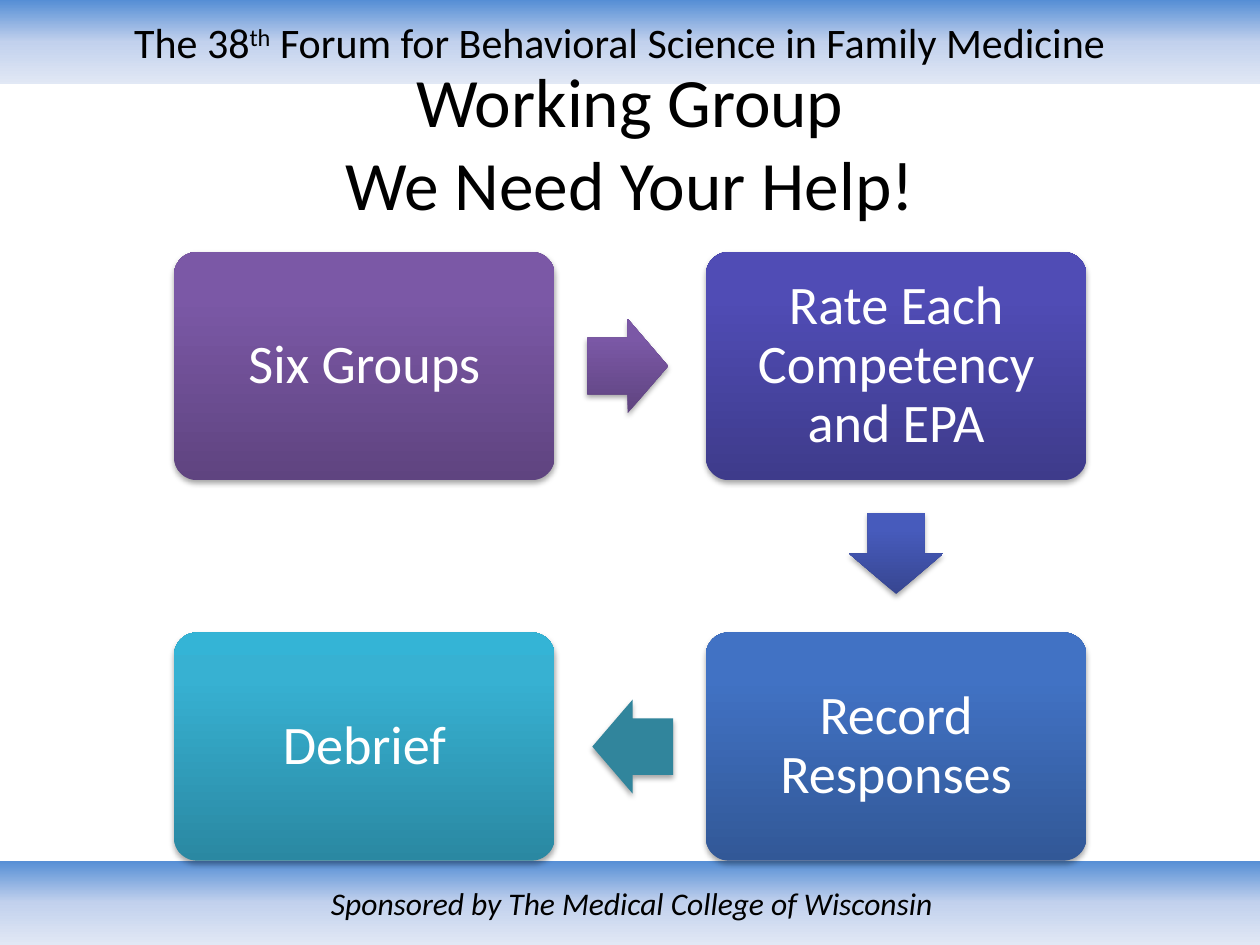
"""Build the working group slide: four steps joined by arrows between two bands."""
from copy import deepcopy
from lxml.etree import SubElement
from pptx import Presentation
from pptx.dml.color import RGBColor
from pptx.enum.shapes import MSO_SHAPE as Kind
from pptx.enum.text import MSO_ANCHOR as Anchor, MSO_AUTO_SIZE as Fit, PP_ALIGN as Align
from pptx.oxml.ns import qn
from pptx.util import Cm, Pt

BLACK = RGBColor(0x00, 0x00, 0x00)
WHITE = RGBColor(0xFF, 0xFF, 0xFF)
TEAL = RGBColor(0x31, 0x85, 0x9C)
SKY = [RGBColor(0x55, 0x8E, 0xD5), RGBColor(0xC2, 0xD1, 0xED), RGBColor(0xE1, 0xE8, 0xF5)]
PLUM = [RGBColor(0x5F, 0x44, 0x80), RGBColor(0x7B, 0x58, 0xA6), RGBColor(0x7C, 0x57, 0xA8)]
VIOLET = [RGBColor(0x3E, 0x3B, 0x8B), RGBColor(0x50, 0x4C, 0xB5), RGBColor(0x4F, 0x4B, 0xB8)]
INDIGO = [RGBColor(0x37, 0x46, 0x91), RGBColor(0x47, 0x5B, 0xBC), RGBColor(0x45, 0x5A, 0xBF)]
BLUE = [RGBColor(0x32, 0x58, 0x97), RGBColor(0x41, 0x72, 0xC4), RGBColor(0x3F, 0x72, 0xC7)]
AQUA = [RGBColor(0x2A, 0x88, 0xA2), RGBColor(0x37, 0xB1, 0xD2), RGBColor(0x34, 0xB4, 0xD6)]

deck = Presentation()
deck.slide_width, deck.slide_height = Cm(25.4), Cm(19.05)
slide = deck.slides.add_slide(deck.slide_layouts[5])
shapes = slide.shapes


def draw(kind, box, ramp, angle=90, middle=0.8, shade=True):
    """Add a shape filled with a three-colour ramp, or one colour, and a soft shadow."""
    shape = shapes.add_shape(kind, *[Cm(n) for n in box])
    if isinstance(ramp, RGBColor):
        shape.fill.solid()
        shape.fill.fore_color.rgb = ramp
    else:
        shape.fill.gradient()
        shape.fill.gradient_angle = angle
        first = shape._element.spPr.xpath(".//a:gs")[0]
        first.addnext(deepcopy(first))
        for stop, color, place in zip(shape.fill.gradient_stops, ramp, (0, middle, 1)):
            stop.color.rgb, stop.position = color, place
        shape._element.spPr.find(qn("a:gradFill")).set("rotWithShape", "0")
    shape.line.fill.background()
    shape.shadow.inherit = False
    if shade:
        glow = SubElement(shape._element.spPr.find(qn("a:effectLst")), qn("a:outerShdw"),
                          blurRad="40000", dist="23000", dir="5400000", rotWithShape="0")
        tint = SubElement(glow, qn("a:srgbClr"), val=str(BLACK))
        SubElement(tint, qn("a:alpha"), val="35000")
    return shape


def write(shape, parts, size, color=BLACK, italic=False):
    """Write centred text run by run and return its paragraph."""
    frame = shape.text_frame
    frame.word_wrap, frame.auto_size = True, Fit.NONE
    frame.vertical_anchor = Anchor.MIDDLE
    para = frame.paragraphs[0]
    para.alignment = Align.CENTER
    for i, part in enumerate(parts):
        if part == "\n":
            para.add_line_break()
            continue
        run = para.add_run()
        run.text = part
        font = run.font
        font.name, font.size, font.italic = "Calibri", Pt(size), italic
        font.color.rgb = color
    return para


header = draw(Kind.RECTANGLE, (0, 0, 25.4, 1.7), SKY, 270, 0.5, False)
para = write(header, ["The 38", "th", " Forum for Behavioral Science in Family Medicine"], 24)
para.runs[1]._r.get_or_add_rPr().set("baseline", "30000")
header.text_frame.margin_right = Cm(0.66)

footer = draw(Kind.RECTANGLE, (0, 17.35, 25.48, 1.7), SKY, 270, 0.5, False)
write(footer, ["Sponsored by The Medical College of Wisconsin"], 18, italic=True)

title = shapes.title
title.left, title.top, title.width, title.height = Cm(1.27), Cm(1.9), Cm(22.86), Cm(1.9)
write(title, ["Working Group", "\n", "We Need Your Help!"], 39.6)
shapes._spTree.append(title._element)

LEFT, RIGHT, UPPER, LOWER = 3.51, 14.23, 5.08, 12.75
steps = [
    ("Six Groups", LEFT, UPPER, PLUM),
    ("Rate Each Competency and EPA", RIGHT, UPPER, VIOLET),
    ("Record Responses", RIGHT, LOWER, BLUE),
    ("Debrief", LEFT, LOWER, AQUA),
]
for text, x, y, ramp in steps:
    step = draw(Kind.ROUNDED_RECTANGLE, (x, y, 7.67, 4.6), ramp)
    step.adjustments[0] = 0.1
    frame = step.text_frame
    frame.margin_left = frame.margin_right = Cm(0.33)
    frame.margin_top = frame.margin_bottom = Cm(0.33)
    write(step, [text], 31, WHITE).line_spacing = 0.9

arrows = [(11.84, 6.43, 0, PLUM), (17.25, 10.21, 90, INDIGO), (11.94, 14.1, 180, TEAL)]
for x, y, turn, ramp in arrows:
    arrow = draw(Kind.RIGHT_ARROW, (x, y, 1.63, 1.9), ramp)
    arrow.adjustments[0], arrow.adjustments[1] = 0.6, 0.5
    arrow.rotation = turn

deck.save("out.pptx")
